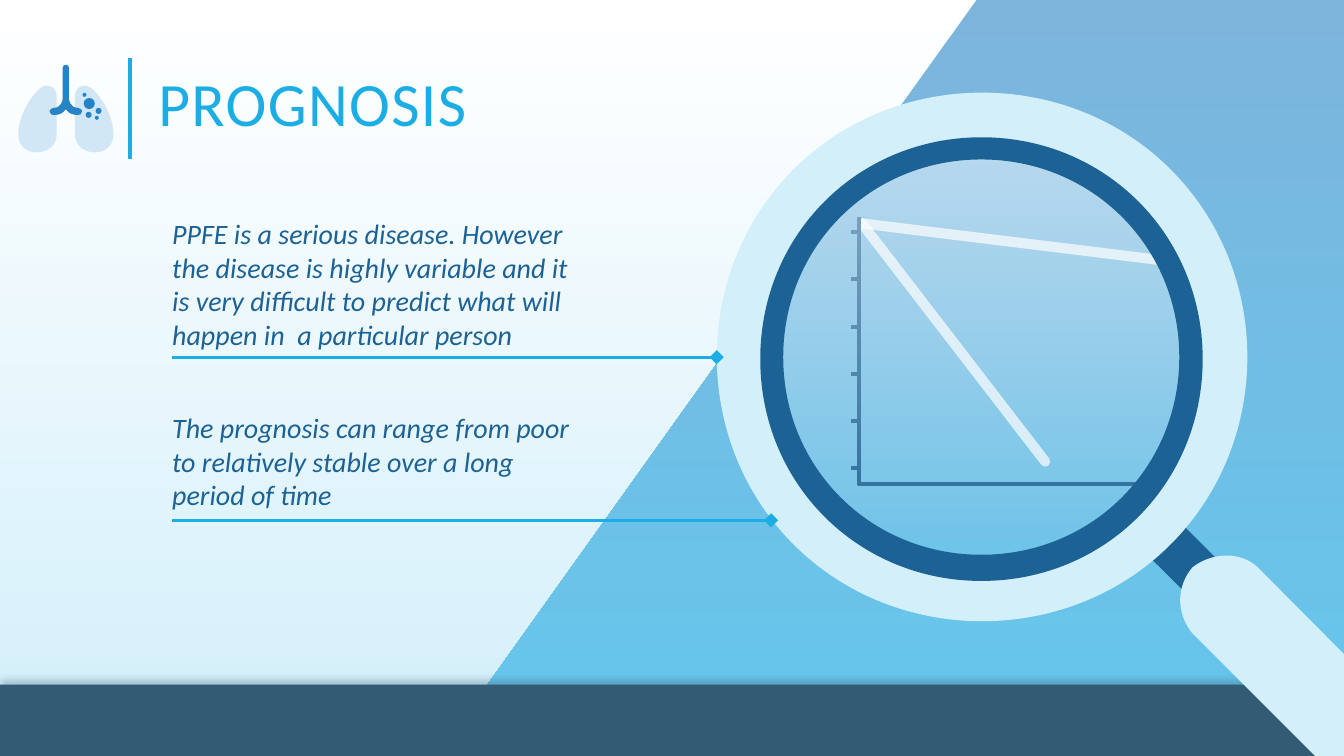
from lxml import etree
from pptx import Presentation
from pptx import util as u
from pptx.dml.color import RGBColor
from pptx.enum import shapes, text
from pptx.oxml import ns

SKY, NAVY, BLUE = "1CADE4", "1D6294", "2683C6"
ICE, MIST, SLATE, WHITE = "D2EFFA", "D1E7F6", "335B74", "FFFFFF"


def rgb(value):
    """Turn a hex string into a colour."""
    return RGBColor.from_string(value)


def sub(parent, tag, **attrs):
    """Append a drawing element with the given attributes."""
    el = etree.SubElement(parent, ns.qn(tag))
    for name, value in attrs.items():
        el.set(name, str(value))
    return el


def gradient(fill, top, bottom):
    """Fill from one colour at the top to another at the bottom."""
    fill.gradient()
    fill.gradient_angle = 270
    for stop, colour in zip(fill.gradient_stops, (top, bottom)):
        stop.color.rgb = rgb(colour)


def fade(sp, *opacities):
    """Set the opacity, in percent, of the colours of a shape in order."""
    colours = sp._element.spPr.iter(ns.qn("a:srgbClr"))
    for colour, opacity in zip(colours, opacities):
        sub(colour, "a:alpha", val=opacity * 1000)


def paint(sp, fill=None):
    """Give a shape a plain fill, with no line and no shadow."""
    sp.shadow.inherit = False
    sp.line.fill.background()
    if fill:
        sp.fill.solid()
        sp.fill.fore_color.rgb = rgb(fill)
    return sp


def preset(slide, kind, x, y, w, h, fill=None):
    """Add a preset shape measured in centimetres."""
    return paint(slide.shapes.add_shape(kind, u.Cm(x), u.Cm(y), u.Cm(w), u.Cm(h)), fill)


def outline(slide, x, y, *contours, fill=None, close=True):
    """Add a freeform from contours of points offset from x, y."""
    fb = None
    for contour in contours:
        pts = [(u.Cm(x + px), u.Cm(y + py)) for px, py in contour]
        if fb:
            fb.move_to(*pts[0])
        else:
            fb = slide.shapes.build_freeform(*pts[0])
        fb.add_line_segments(pts[1:], close=close)
    return paint(fb.convert_to_shape(), fill)


def curved(slide, x, y, *contours, fill):
    """Add a freeform whose contours are chains of cubic Bezier curves."""
    sp = outline(slide, x, y, *contours, fill=fill)
    segments = list(sp._element.spPr.iter(ns.qn("a:lnTo")))
    for i in range(0, len(segments), 3):
        bezier = etree.Element(ns.qn("a:cubicBezTo"))
        segments[i].addprevious(bezier)
        for segment in segments[i:i + 3]:
            bezier.append(segment[0])
            segment.getparent().remove(segment)
    return sp


def mirror(points, width):
    """Flip points from left to right within a width."""
    return [(width - x, y) for x, y in points]


def oval(x, y, w, h):
    """Give the curves of an ellipse that fills a box."""
    unit = [(0.5, 0), (0.22, 0), (0, 0.22), (0, 0.5), (0, 0.78), (0.22, 1), (0.5, 1),
            (0.78, 1), (1, 0.78), (1, 0.5), (1, 0.22), (0.78, 0), (0.5, 0)]
    return [(x + w * px, y + h * py) for px, py in unit]


def bulged(x, y, w, h, b):
    """Give the curves that swell the sides of a box into a circle."""
    r, d = x + w, y + h
    return [(r, y), (r - b, y - b), (x + b, y - b), (x, y), (x - b, y + b), (x - b, d - b),
            (x, d), (x + b, d + b), (r - b, d + b), (r, d), (r + b, d - b), (r + b, y + b),
            (r, y)]


def line(slide, x1, y1, x2, y2, colour, width):
    """Add a straight line without a shadow."""
    cn = slide.shapes.add_connector(shapes.MSO_CONNECTOR.STRAIGHT,
                                    u.Cm(x1), u.Cm(y1), u.Cm(x2), u.Cm(y2))
    cn.line.color.rgb = rgb(colour)
    cn.line.width = u.Pt(width)
    sub(cn._element.spPr, "a:effectLst")
    return cn


def write(tf, content, size=20, colour=NAVY, italic=False, spacing=None, tracking=0, inset=0):
    """Write one formatted paragraph, centred vertically in its frame."""
    tf.word_wrap = True
    tf.vertical_anchor = text.MSO_ANCHOR.MIDDLE
    tf.margin_left = tf.margin_right = 0
    tf.margin_top = tf.margin_bottom = u.Cm(inset)
    p = tf.paragraphs[0]
    p.alignment = text.PP_ALIGN.LEFT
    p.line_spacing = spacing
    r = p.add_run()
    r.text = content
    r.font.name, r.font.size, r.font.italic = "Calibri", u.Pt(size), italic
    r.font.color.rgb = rgb(colour)
    if tracking:
        r._r.get_or_add_rPr().set("spc", str(tracking * 100))


def heading(slide, x, y, w, h):
    """Place the title and the rule to its left."""
    title = slide.shapes.title
    title.left, title.top, title.width, title.height = map(u.Cm, (x, y, w, h))
    title.text_frame.auto_size = text.MSO_AUTO_SIZE.NONE
    write(title.text_frame, "PROGNOSIS", size=44, colour=SKY, spacing=0.8, tracking=1)
    line(slide, x - 0.72, y + h, x - 0.72, y, SKY, 2.5)


def lungs(slide, x, y, w):
    """Draw the lungs icon."""
    lung = [(0.97, 0.79), (0.97, 0.79), (0.97, 0.53), (0.71, 0.53), (0.46, 0.53), (0, 1.24),
            (0, 1.73), (0, 2.24), (0.48, 2.21), (0.48, 2.21), (0.48, 2.21), (0.97, 2.21),
            (0.97, 1.73)]
    for side in (lung, mirror(lung, w)):
        curved(slide, x, y, side, fill=MIST)
    airway = [(1.2, 0), (1.15, 0), (1.12, 0.04), (1.12, 0.08), (1.12, 0.08),
              (1.12, 0.86), (1.12, 0.86), (1.12, 0.89), (1.09, 1.09), (0.89, 1.09),
              (0.84, 1.09), (0.79, 1.14), (0.79, 1.17), (0.79, 1.24), (0.84, 1.27),
              (0.89, 1.27), (1.04, 1.27), (1.14, 1.22), (1.2, 1.12)]
    curved(slide, x, y, airway + mirror(airway, w)[-2::-1], fill=BLUE)
    for dx, dy, d in ((1.65, 0.84, 0.28), (1.95, 1.09, 0.15), (1.7, 1.19, 0.15),
                      (1.62, 0.71, 0.1), (1.93, 1.29, 0.1)):
        preset(slide, shapes.MSO_SHAPE.OVAL, x + dx, y + dy, d, d, BLUE)


def beam(slide, x, y, w, h):
    """Draw the slanted translucent panel."""
    sp = outline(slide, x, y, [(13.61, 0), (w, 0), (w, h), (0, h)])
    gradient(sp.fill, BLUE, SKY)
    fade(sp, 60, 60)


def survival_graph(slide, x, y, w, h):
    """Draw the axes, ticks and the two courses of the disease."""
    for n in range(6):
        tick = y + 0.37 + 1.19 * n
        line(slide, x - 0.2, tick, x, tick, NAVY, 3)
    for dx, dy in ((8.15, 1.14), (4.7, 6.15)):
        course = line(slide, x + 0.08, y + 0.15, x + dx, y + dy, WHITE, 7.25)
        course.line._get_or_add_ln().set("cap", "rnd")
        fade(course, 70)
    axes = outline(slide, x, y, [(0, 0), (0, h), (w, h)], close=False)
    axes.fill.background()
    axes.line.color.rgb = rgb(NAVY)
    axes.line.width = u.Pt(3)


def footer(slide, x, y, w, h):
    """Draw the bottom band with its upward shadow."""
    sp = preset(slide, shapes.MSO_SHAPE.RECTANGLE, x, y, w, h, SLATE)
    effects = sp._element.spPr.find(ns.qn("a:effectLst"))
    shadow = sub(effects, "a:outerShdw", blurRad=u.Pt(6), dist=u.Pt(3),
                 dir=270 * 60000, algn="b", rotWithShape=0)
    sub(sub(shadow, "a:srgbClr", val=SLATE), "a:alpha", val=40000)


def magnifier(slide, x, y):
    """Draw the handle, the glass and its two rings."""
    outline(slide, x, y, [(12.98, 12.17), (12.17, 13), (10.77, 11.61), (11.58, 10.77)], fill=NAVY)
    grip = [(18.87, 18.92), (18.47, 19.33), (17.73, 19.33), (17.25, 18.92), (17.25, 18.92),
            (11.99, 13.67), (11.99, 13.67), (11.58, 13.16), (11.58, 12.5), (11.99, 12.01),
            (12.5, 11.61), (13.23, 11.61), (13.64, 12.01), (13.64, 12.01), (18.87, 17.27),
            (18.87, 17.27), (19.3, 17.75), (19.3, 18.41), (18.87, 18.92)]
    curved(slide, x, y, grip, fill=ICE)
    rim = (1.1, 1.17, 11.15, 11.18)
    glass = preset(slide, shapes.MSO_SHAPE.OVAL, x + rim[0], y + rim[1], *rim[2:])
    gradient(glass.fill, WHITE, WHITE)
    fade(glass, 50, 0)
    curved(slide, x, y, bulged(1.94, 1.98, 9.5, 9.45, 2.58),
           bulged(3, 3.04, 7.37, 7.39, 2.03), fill=ICE)
    curved(slide, x, y, oval(*rim), oval(1.68, 1.73, 9.98, 9.96), fill=NAVY)


def note(slide, x, y, w, h, content, reach, drop):
    """Place a remark over a line that points at the magnifier."""
    tb = slide.shapes.add_textbox(u.Cm(x), u.Cm(y), u.Cm(w), u.Cm(h))
    tb.text_frame.auto_size = text.MSO_AUTO_SIZE.SHAPE_TO_FIT_TEXT
    write(tb.text_frame, content, italic=True, inset=0.15)
    pointer = line(slide, x, y + drop, x + reach, y + drop, SKY, 2)
    sub(pointer.line._get_or_add_ln(), "a:tailEnd", type="diamond", w="lg", len="lg")


def main():
    """Build the prognosis slide."""
    prs = Presentation()
    prs.slide_width, prs.slide_height = u.Cm(33.87), u.Cm(19.05)
    slide = prs.slides.add_slide(prs.slide_layouts[5])
    gradient(slide.background.fill, WHITE, ICE)
    heading(slide, 3.99, 1.47, 27, 2.54)
    lungs(slide, 0.46, 1.63, 2.4)
    beam(slide, 11, 0, 22.87, 19.05)
    survival_graph(slide, 21.64, 5.48, 8.66, 6.72)
    footer(slide, 0, 17.25, 33.87, 1.8)
    magnifier(slide, 18.06, 2.29)
    note(slide, 4.34, 5.3, 10.31, 3.71,
         "PPFE is a serious disease. However the disease is highly variable and it is "
         "very difficult to predict what will happen in  a particular person", 13.72, 3.7)
    note(slide, 4.34, 10.18, 10.31, 2.87,
         "The prognosis can range from poor to relatively stable over a long period of time",
         15.09, 2.93)
    prs.save("out.pptx")


if __name__ == "__main__":
    main()
